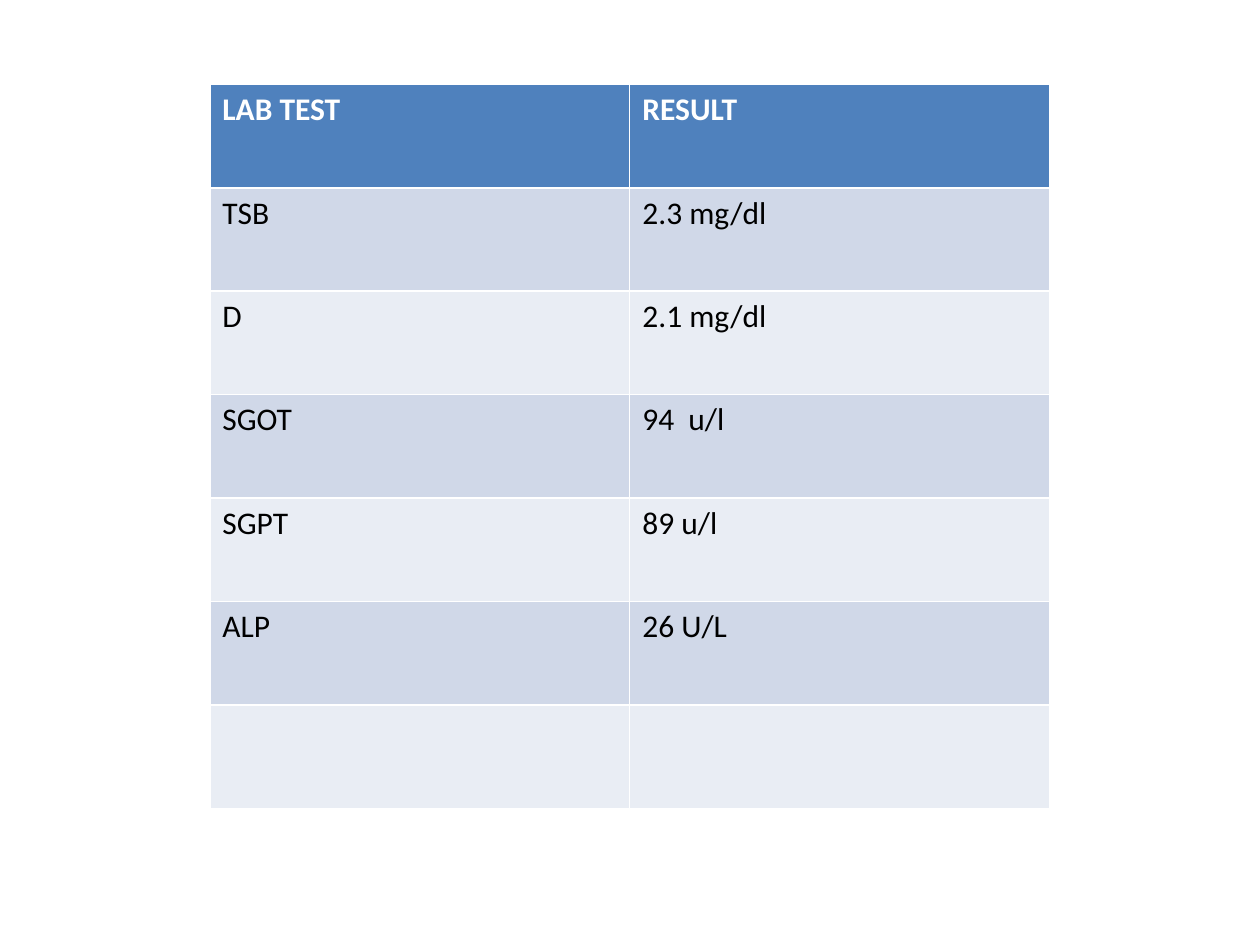
from pptx import Presentation
from pptx.dml.color import RGBColor
from pptx.util import Cm, Pt

COLORS = {
    "header": "4F81BD",
    "odd_row": "D0D8E8",
    "even_row": "E9EDF4",
    "header_text": "FFFFFF",
    "body_text": "000000",
}

lab_results = [
    ("LAB TEST", "RESULT"),
    ("TSB", "2.3 mg/dl"),
    ("D", "2.1 mg/dl"),
    ("SGOT", "94  u/l"),
    ("SGPT", "89 u/l"),
    ("ALP", "26 U/L"),
    ("", ""),
]

prs = Presentation()
prs.slide_width, prs.slide_height = Cm(25.4), Cm(19.05)
slide = prs.slides.add_slide(prs.slide_layouts[6])

# The default table style supplies the white rules, thicker below the header.
lab_table = slide.shapes.add_table(
    len(lab_results), 2, Cm(4.23), Cm(1.7), Cm(16.93), Cm(14.6)
).table

for row, texts in enumerate(lab_results):
    is_header = row == 0
    fill = "header" if is_header else "odd_row" if row % 2 else "even_row"
    text_color = "header_text" if is_header else "body_text"
    for column, text in enumerate(texts):
        cell = lab_table.cell(row, column)
        cell.fill.solid()
        cell.fill.fore_color.rgb = RGBColor.from_string(COLORS[fill])
        if not text:
            continue
        cell.text = text
        font = cell.text_frame.paragraphs[0].font
        font.name = "Calibri"
        font.size = Pt(18)
        font.bold = is_header
        font.color.rgb = RGBColor.from_string(COLORS[text_color])

prs.save("out.pptx")
